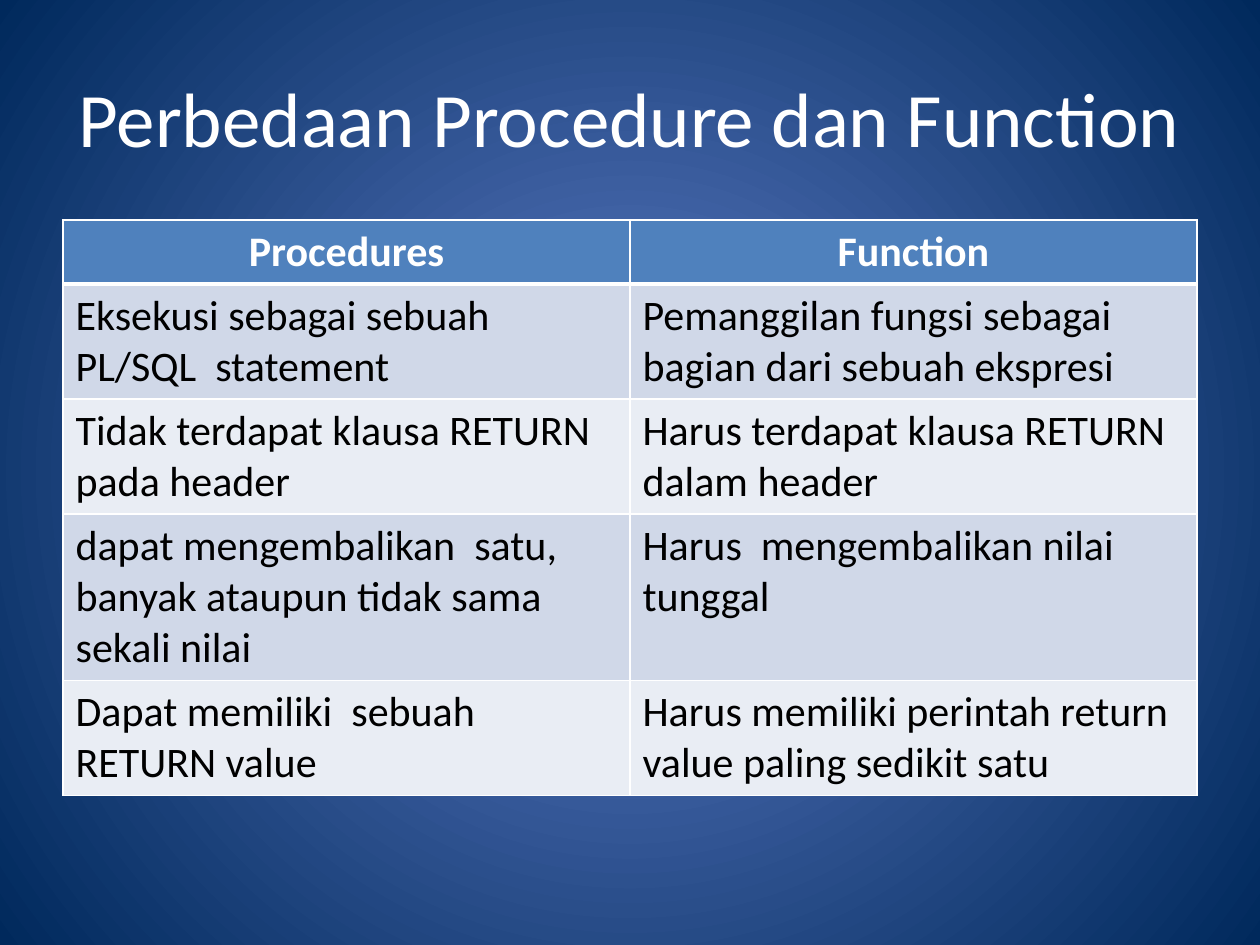
from dataclasses import dataclass

from lxml.etree import SubElement
from pptx import Presentation
from pptx.dml.color import RGBColor
from pptx.enum.text import MSO_ANCHOR, PP_ALIGN
from pptx.oxml.ns import qn
from pptx.util import Emu, Pt

PX = 914400 / 126


def px(length):
    return Emu(round(length * PX))


@dataclass(frozen=True)
class Theme:
    font: str = "Calibri"
    glow: str = "5E7CC5"
    navy: str = "00295C"
    light: str = "FFFFFF"
    dark: str = "000000"
    header: str = "4F81BD"
    bands: tuple = ("D0D8E8", "E9EDF4")
    title_size: int = 44
    table_size: int = 24
    thin: int = 1
    thick: int = 3


def write(frame, text, *, font, size, color, bold=False, align=PP_ALIGN.LEFT):
    para = frame.paragraphs[0]
    para.alignment = align
    span = para.add_run()
    span.text = text
    span.font.name = font
    span.font.size = Pt(size)
    span.font.bold = bold
    span.font.color.rgb = RGBColor.from_string(color)


class SlideBuilder:
    def __init__(self, deck, theme):
        self.theme = theme
        self.page = deck.slides.add_slide(deck.slide_layouts[5])

    def background(self):
        fill = self.page.background.fill
        fill.gradient()
        for stop, color in zip(fill.gradient_stops, (self.theme.glow, self.theme.navy)):
            stop.color.rgb = RGBColor.from_string(color)
        gradient = next(self.page.element.iter(qn("a:gradFill")))
        gradient.remove(gradient.find(qn("a:lin")))
        circle = SubElement(gradient, qn("a:path"), path="circle")
        SubElement(circle, qn("a:fillToRect"), l="50000", t="50000", r="50000", b="50000")

    def title(self, text, left, top, width, height):
        box = self.page.shapes.title
        box.left, box.top, box.width, box.height = map(px, (left, top, width, height))
        box.text_frame.vertical_anchor = MSO_ANCHOR.MIDDLE
        write(box.text_frame, text, font=self.theme.font, size=self.theme.title_size,
              color=self.theme.light, align=PP_ALIGN.CENTER)

    def borders(self, cell, **widths):
        properties = cell._tc.get_or_add_tcPr()
        for position, (side, width) in enumerate(widths.items()):
            line = SubElement(properties, qn(f"a:ln{side}"), w=str(Pt(width)))
            fill = SubElement(line, qn("a:solidFill"))
            SubElement(fill, qn("a:srgbClr"), val=self.theme.light)
            properties.insert(position, line)

    def table(self, rows, left, top, width, height, row_height):
        theme = self.theme
        frame = self.page.shapes.add_table(
            len(rows), len(rows[0]), px(left), px(top), px(width), px(height))
        for row_index, texts in enumerate(rows):
            frame.table.rows[row_index].height = px(row_height)
            is_header = row_index == 0
            fill = theme.header if is_header else theme.bands[(row_index - 1) % 2]
            for column_index, text in enumerate(texts):
                cell = frame.table.cell(row_index, column_index)
                cell.fill.solid()
                cell.fill.fore_color.rgb = RGBColor.from_string(fill)
                self.borders(cell, L=theme.thin, R=theme.thin,
                             T=theme.thick if row_index == 1 else theme.thin,
                             B=theme.thick if is_header else theme.thin)
                write(cell.text_frame, text, font=theme.font, size=theme.table_size,
                      color=theme.light if is_header else theme.dark, bold=is_header,
                      align=PP_ALIGN.CENTER if is_header else PP_ALIGN.LEFT)
        frame.height = px(height)


COMPARISON = [
    ("Procedures", "Function"),
    ("Eksekusi sebagai sebuah  PL/SQL  statement",
     "Pemanggilan fungsi sebagai bagian dari sebuah ekspresi"),
    ("Tidak terdapat klausa RETURN pada header",
     "Harus terdapat klausa RETURN dalam header"),
    ("dapat mengembalikan  satu, banyak ataupun tidak sama sekali nilai",
     "Harus  mengembalikan nilai tunggal"),
    ("Dapat memiliki  sebuah RETURN value",
     "Harus memiliki perintah return value paling sedikit satu"),
]


def main():
    deck = Presentation()
    deck.slide_width, deck.slide_height = px(1260), px(945)
    builder = SlideBuilder(deck, Theme())
    builder.background()
    builder.title("Perbedaan Procedure dan Function", 63, 38, 1134, 158)
    builder.table(COMPARISON, 63, 220, 1134, 567, row_height=52)
    deck.save("out.pptx")


if __name__ == "__main__":
    main()
